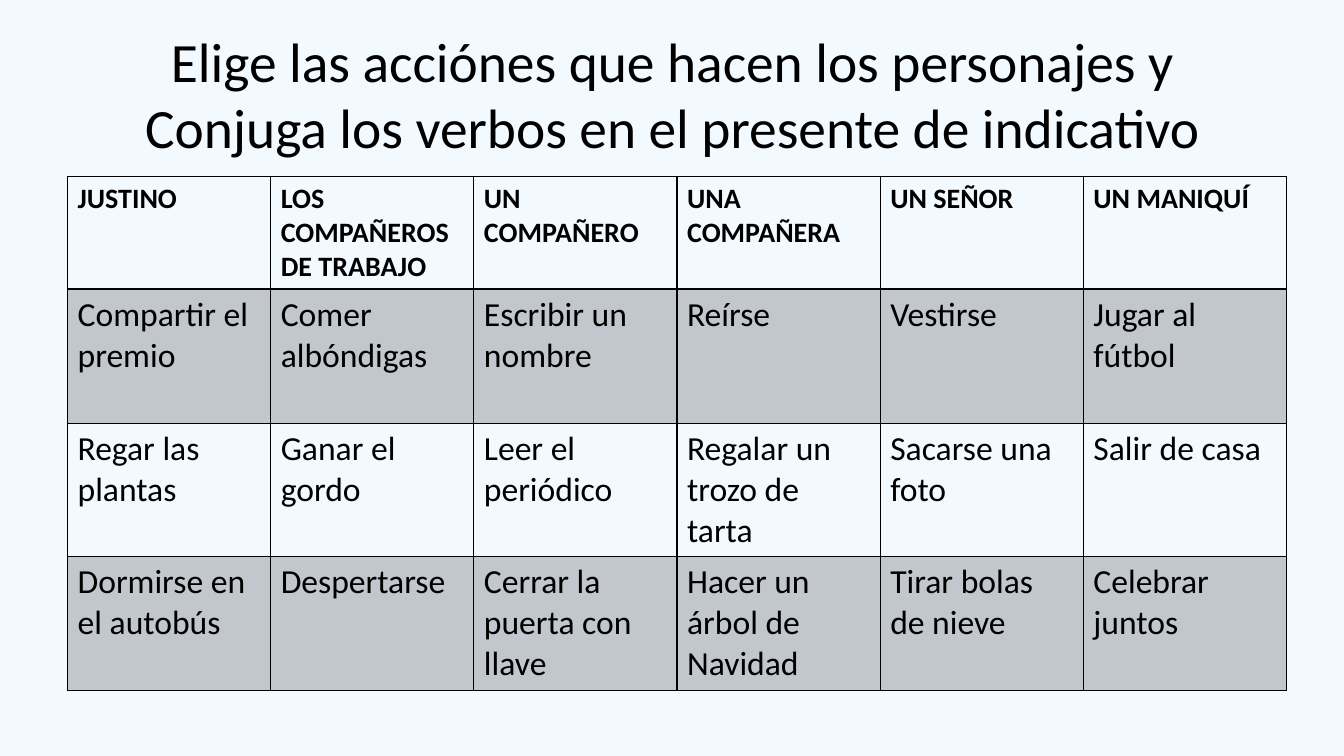
import pptx
import pptx.util
import pptx.dml.color
import pptx.enum.text
import pptx.oxml
import pptx.oxml.ns

Inches = pptx.util.Inches
Pt = pptx.util.Pt
COLORS = {"background": "F2F9FF", "ink": "000000"}
BAND_OPACITY = 20000
ROW_HEIGHTS = [1.12, 1.33, 1.32, 1.33]
COLUMN_WIDTH = 2.015
ACTIVITIES = [
    ["JUSTINO", "LOS COMPAÑEROS DE TRABAJO", "UN COMPAÑERO",
     "UNA COMPAÑERA", "UN SEÑOR", "UN MANIQUÍ"],
    ["Compartir el premio", "Comer albóndigas", "Escribir un nombre",
     "Reírse", "Vestirse", "Jugar al fútbol"],
    ["Regar las plantas", "Ganar el gordo", "Leer el periódico",
     "Regalar un trozo de tarta", "Sacarse una foto", "Salir de casa"],
    ["Dormirse en el autobús", "Despertarse", "Cerrar la puerta con llave",
     "Hacer un árbol de Navidad", "Tirar bolas de nieve", "Celebrar juntos"],
]


def write(frame, text, size, bold=False):
    frame.text = text
    font = frame.paragraphs[0].runs[0].font
    font.color.rgb = pptx.dml.color.RGBColor.from_string(COLORS["ink"])
    for attribute, value in {"name": "Calibri", "size": Pt(size), "bold": bold}.items():
        setattr(font, attribute, value)


def add_borders(cell, widths):
    """Draw the cell's sides; widths maps L, R, T, B to points, in that order."""
    properties = cell._tc.get_or_add_tcPr()
    for position, (side, width) in enumerate(widths.items()):
        properties.insert(position, pptx.oxml.parse_xml(
            f'<a:ln{side} {pptx.oxml.ns.nsdecls("a")} w="{Pt(width)}"><a:solidFill>'
            f'<a:srgbClr val="{COLORS["ink"]}"/></a:solidFill></a:ln{side}>'))


presentation = pptx.Presentation()
presentation.slide_width = Inches(13.33)
presentation.slide_height = Inches(7.5)
slide = presentation.slides.add_slide(presentation.slide_layouts[6])
slide.background.fill.solid()
slide.background.fill.fore_color.rgb = pptx.dml.color.RGBColor.from_string(COLORS["background"])

title = slide.shapes.add_textbox(Inches(0.67), Inches(0.3), Inches(12), Inches(1.25)).text_frame
title.word_wrap = True
title.vertical_anchor = pptx.enum.text.MSO_ANCHOR.MIDDLE
write(title, "Elige las acciónes que hacen los personajes y "
      "Conjuga los verbos en el presente de indicativo", 39.6)
title.paragraphs[0].alignment = pptx.enum.text.PP_ALIGN.CENTER

activities = slide.shapes.add_table(
    len(ACTIVITIES), len(ACTIVITIES[0]), Inches(0.67), Inches(1.75),
    Inches(COLUMN_WIDTH * len(ACTIVITIES[0])), Inches(sum(ROW_HEIGHTS))).table
activities.first_row = activities.horz_banding = False
for column in activities.columns:
    column.width = Inches(COLUMN_WIDTH)

for row, (height, texts) in enumerate(zip(ROW_HEIGHTS, ACTIVITIES)):
    activities.rows[row].height = Inches(height)
    is_header = row == 0
    for column, text in enumerate(texts):
        cell = activities.cell(row, column)
        write(cell.text_frame, text, 20 if is_header else 24, is_header)
        if row % 2:
            cell.fill.solid()
            cell.fill.fore_color.rgb = pptx.dml.color.RGBColor.from_string(COLORS["ink"])
            shade = cell._tc.tcPr.find(".//" + pptx.oxml.ns.qn("a:srgbClr"))
            shade.append(pptx.oxml.parse_xml(
                f'<a:alpha {pptx.oxml.ns.nsdecls("a")} val="{BAND_OPACITY}"/>'))
        else:
            cell.fill.background()
        add_borders(cell, {"L": 1, "R": 1, "T": 2 if row == 1 else 1,
                           "B": 2 if is_header else 1})

presentation.save("out.pptx")
